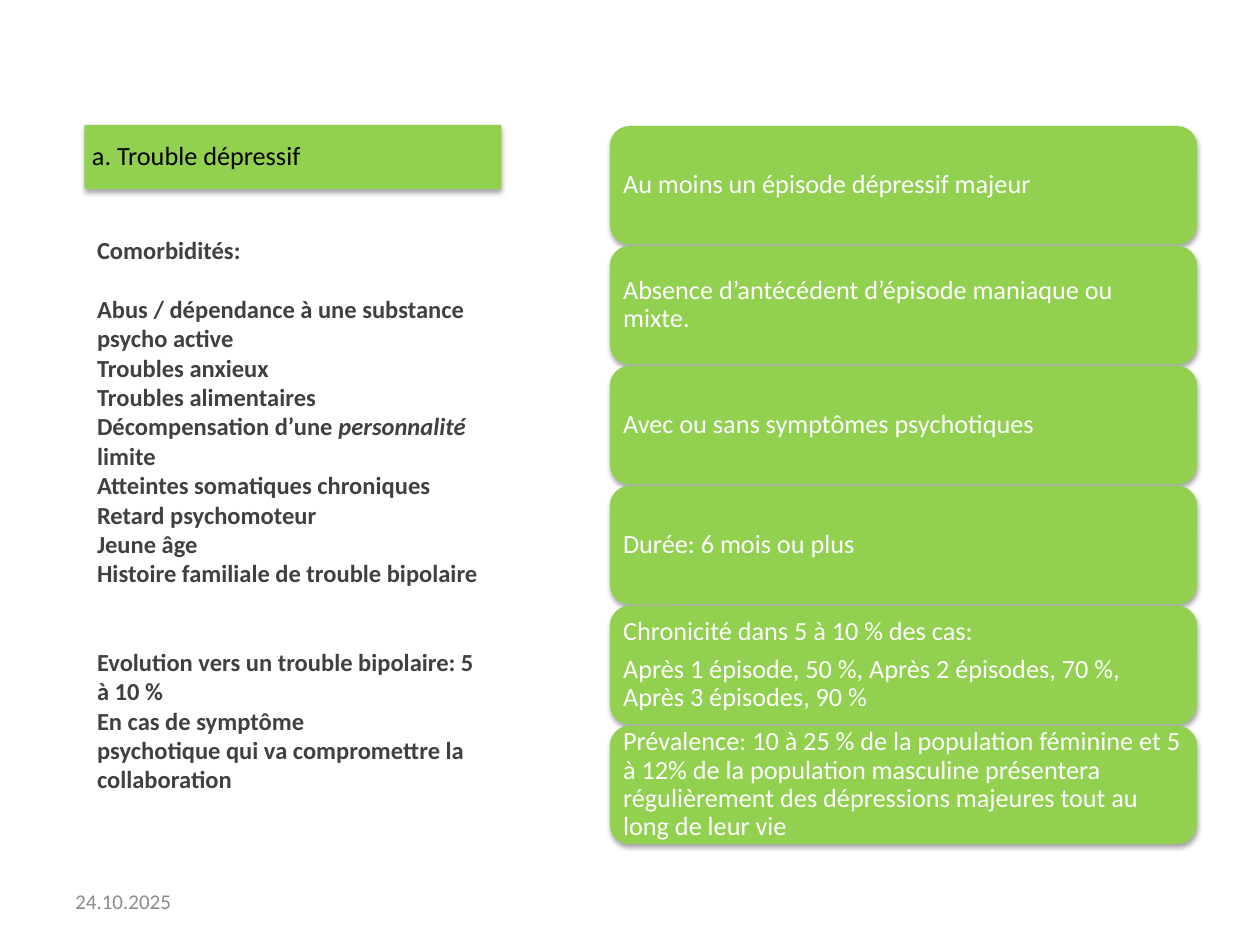
from lxml.etree import SubElement
from pptx import Presentation
from pptx.dml.color import RGBColor
from pptx.enum.shapes import MSO_SHAPE as Shape
from pptx.enum.text import MSO_ANCHOR as Anchor, MSO_AUTO_SIZE as AutoSize, PP_ALIGN as Align
from pptx.oxml.ns import qn
from pptx.util import Inches, Pt

GREEN = RGBColor(0x92, 0xD0, 0x50)
WHITE = RGBColor(0xFF, 0xFF, 0xFF)
BLACK = RGBColor(0x00, 0x00, 0x00)
DARK = RGBColor(0x40, 0x40, 0x40)
GREY = RGBColor(0x8C, 0x8C, 0x8C)
FONT = "Calibri"

# Content: each comorbidity line is (blank lines above, [(text, italic), ...])
HEADING = "a. Trouble dépressif"
DATE = "24.10.2025"
COMORBIDITIES = [
    (0, [("Comorbidités:", False)]),
    (1, [("Abus / dépendance à une substance psycho active", False)]),
    (0, [("Troubles anxieux", False)]),
    (0, [("Troubles alimentaires", False)]),
    (0, [("Décompensation d’une ", False), ("personnalité", True), (" limite", False)]),
    (0, [("Atteintes somatiques chroniques", False)]),
    (0, [("Retard psychomoteur", False)]),
    (0, [("Jeune âge", False)]),
    (0, [("Histoire familiale de trouble bipolaire", False)]),
    (2, [("Evolution vers un trouble bipolaire: 5 à 10 %", False)]),
    (0, [("En cas de symptôme", False)]),
    (0, [("psychotique qui va compromettre la collaboration", False)]),
]
FACTS = [
    ["Au moins un épisode dépressif majeur"],
    ["Absence d’antécédent d’épisode maniaque ou mixte."],
    ["Avec ou sans symptômes psychotiques"],
    ["Durée: 6 mois ou plus"],
    ["Chronicité dans 5 à 10 % des cas:",
     "Après 1 épisode, 50 %, Après 2 épisodes, 70 %, Après 3 épisodes, 90 %"],
    ["Prévalence: 10 à 25 % de la population féminine et 5 à 12% de la population "
     "masculine présentera régulièrement des dépressions majeures tout au long de leur vie"],
]

# Layout in inches
LEFT_COLUMN, LEFT_WIDTH = 0.67, 3.31
RIGHT_COLUMN, RIGHT_WIDTH = 4.84, 4.66
FACTS_TOP, FACT_HEIGHT, FACT_PITCH = 1.0, 0.94, 0.952
TITLE_LINE = 16.8  # points


def add_run(paragraph, text, size, color, bold=False, italic=False):
    run = paragraph.add_run()
    run.text = text
    font = run.font
    font.name, font.size, font.bold, font.italic = FONT, Pt(size), bold, italic
    font.color.rgb = color


def add_shadow(shape):
    shape.shadow.inherit = False
    effects = shape._element.spPr.find(qn("a:effectLst"))
    shadow = SubElement(effects, qn("a:outerShdw"), blurRad=str(Pt(3.1)),
                        dist=str(Pt(1.8)), dir="5400000", rotWithShape="0")
    color = SubElement(shadow, qn("a:srgbClr"), val="000000")
    SubElement(color, qn("a:alpha"), val="35000")


def add_green_box(slide, kind, left, top, width, height, lines, color):
    box = slide.shapes.add_shape(kind, *map(Inches, (left, top, width, height)))
    box.fill.solid()
    box.fill.fore_color.rgb = GREEN
    box.line.fill.background()
    add_shadow(box)
    frame = box.text_frame
    frame.word_wrap = True
    frame.vertical_anchor = Anchor.MIDDLE
    frame.margin_left = frame.margin_right = Inches(0.06)
    frame.margin_top = frame.margin_bottom = Inches(0.06)
    for index, line in enumerate(lines):
        paragraph = frame.paragraphs[0] if index == 0 else frame.add_paragraph()
        paragraph.alignment = Align.LEFT
        paragraph.line_spacing = 0.9
        paragraph.space_after = Pt(5.25)
        add_run(paragraph, line, 15, color)


presentation = Presentation()
presentation.slide_width, presentation.slide_height = Inches(10), Inches(7.5)
slide = presentation.slides.add_slide(presentation.slide_layouts[5])

# Comorbidities in the title placeholder
title = slide.shapes.title
title.left, title.top = Inches(LEFT_COLUMN), Inches(1.7)
title.width, title.height = Inches(LEFT_WIDTH), Inches(4.65)
frame = title.text_frame
frame.auto_size = AutoSize.NONE
frame.word_wrap = True
frame.vertical_anchor = Anchor.BOTTOM
for index, (blank_lines, runs) in enumerate(COMORBIDITIES):
    paragraph = frame.paragraphs[0] if index == 0 else frame.add_paragraph()
    paragraph.alignment = Align.LEFT
    paragraph.space_before = Pt(blank_lines * TITLE_LINE)
    for text, italic in runs:
        add_run(paragraph, text, 14, DARK, bold=True, italic=italic)

# Date
date = slide.shapes.add_textbox(Inches(0.5), Inches(6.95), Inches(2.33), Inches(0.4))
date.text_frame.word_wrap = True
date.text_frame.vertical_anchor = Anchor.MIDDLE
add_run(date.text_frame.paragraphs[0], DATE, 12, GREY)

# Stack of facts
for row, lines in enumerate(FACTS):
    add_green_box(slide, Shape.ROUNDED_RECTANGLE, RIGHT_COLUMN, FACTS_TOP + row * FACT_PITCH,
                  RIGHT_WIDTH, FACT_HEIGHT, lines, WHITE)

# Heading
add_green_box(slide, Shape.RECTANGLE, LEFT_COLUMN, 0.99, LEFT_WIDTH, 0.51, [HEADING], BLACK)

presentation.save("out.pptx")
